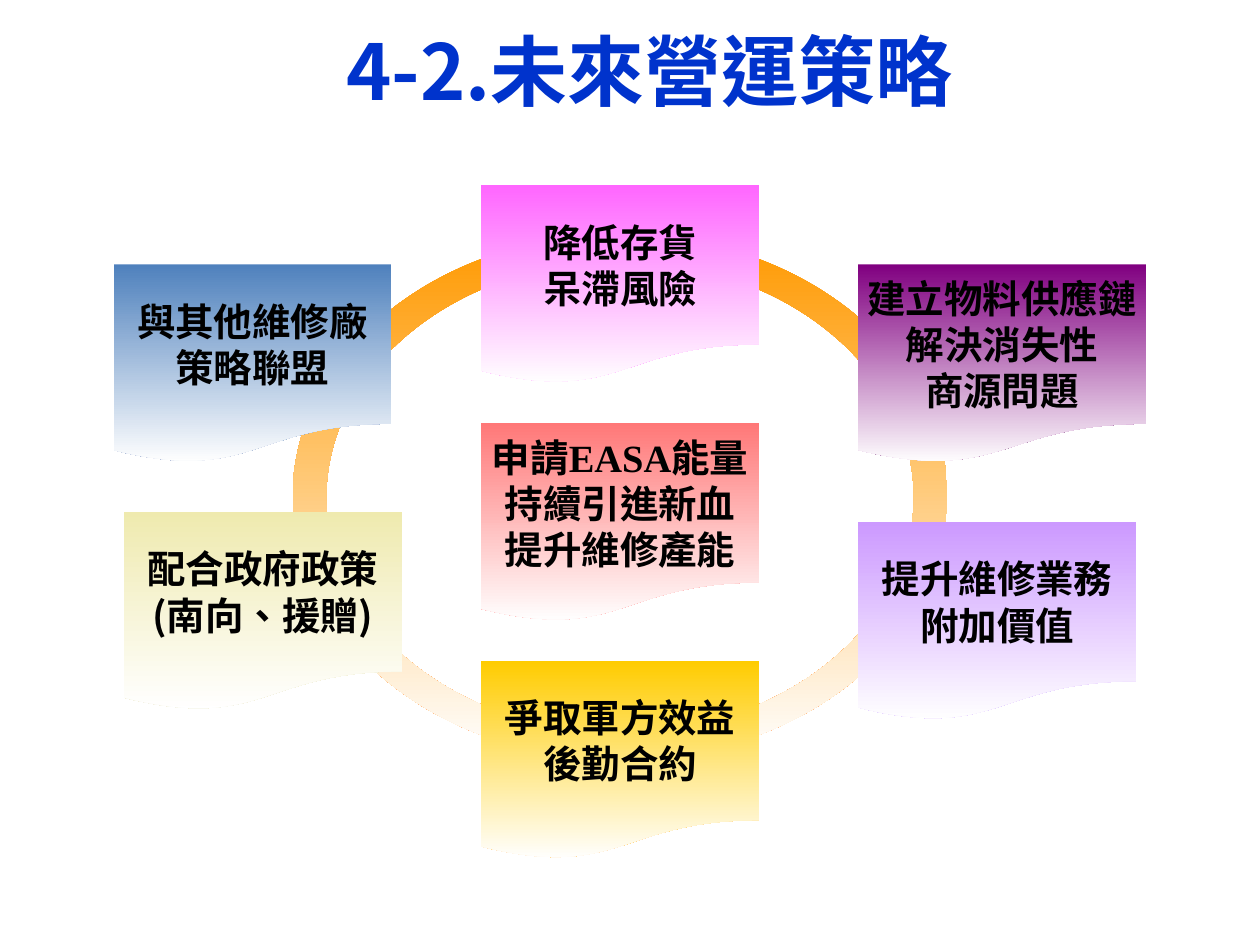
from lxml.etree import SubElement
from pptx import Presentation
from pptx.dml.color import RGBColor
from pptx.enum.lang import MSO_LANGUAGE_ID as Language
from pptx.enum.shapes import MSO_SHAPE as Preset
from pptx.enum.text import MSO_ANCHOR as Anchor, PP_ALIGN as Align
from pptx.oxml.ns import qn
from pptx.util import Cm, Pt

BLACK = RGBColor(0x00, 0x00, 0x00)
WHITE = RGBColor(0xFF, 0xFF, 0xFF)
TITLE_BLUE = RGBColor(0x00, 0x33, 0xCC)
ORANGE = RGBColor(0xFF, 0x99, 0x00)
STEEL_BLUE = RGBColor(0x4F, 0x81, 0xBD)
PINK = RGBColor(0xFF, 0x66, 0xFF)
CREAM = RGBColor(0xEF, 0xEA, 0xAF)
GOLD = RGBColor(0xFF, 0xCC, 0x00)
CORAL = RGBColor(0xFF, 0x78, 0x78)
LILAC = RGBColor(0xCC, 0x99, 0xFF)
PURPLE = RGBColor(0x80, 0x00, 0x80)

SANS = "Noto Sans CJK SC"
SERIF = "Times New Roman"
CARD_WIDTH, CARD_HEIGHT = 5.6, 4.01
MIDDLE_LEFT, RIGHT_LEFT = 9.7, 17.3
UPPER_TOP = 5.33
CURVE = 0.55
QUARTER_TURNS = [(-1, 0), (0, -1), (1, 0), (0, 1), (-1, 0)]

CARDS = [
    (2.29, UPPER_TOP, CARD_WIDTH, STEEL_BLUE, SANS, ["與其他維修廠", "策略聯盟"]),
    (MIDDLE_LEFT, 3.73, CARD_WIDTH, PINK, SANS, ["降低存貨", "呆滯風險"]),
    (2.5, 10.32, CARD_WIDTH, CREAM, SANS, ["配合政府政策", "(南向、援贈)"]),
    (MIDDLE_LEFT, 13.32, CARD_WIDTH, GOLD, SANS, ["爭取軍方效益", "後勤合約"]),
    (MIDDLE_LEFT, 8.53, CARD_WIDTH, CORAL, SERIF,
     ["申請EASA能量", "持續引進新血", "提升維修產能"]),
    (RIGHT_LEFT, 10.52, CARD_WIDTH, LILAC, SANS, ["提升維修業務", "附加價值"]),
    (RIGHT_LEFT, UPPER_TOP, 5.8, PURPLE, SANS,
     ["建立物料供應鏈", "解決消失性", "商源問題"]),
]


def apply_format(target, values):
    """Set every attribute named in values on the target."""
    for name, value in values.items():
        setattr(target, name, value)


def fade_to_white(shape, color):
    """Fill a shape with a downward gradient and remove its line and shadow."""
    shape.shadow.inherit = False
    shape.line.fill.background()
    shape.fill.gradient()
    shape.fill.gradient_angle = 270
    for stop, stop_color in zip(shape.fill.gradient_stops, (color, WHITE)):
        stop.color.rgb = stop_color


def write_lines(frame, lines, font_name, size, color, **paragraph_format):
    """Write centred bold lines, one paragraph each."""
    for index, line in enumerate(lines):
        paragraph = frame.add_paragraph() if index else frame.paragraphs[0]
        apply_format(paragraph, {"alignment": Align.CENTER, **paragraph_format})
        run = paragraph.add_run()
        run.text = line
        apply_format(run.font, {
            "name": font_name, "size": Pt(size), "bold": True,
            "language_id": Language.TRADITIONAL_CHINESE,
        })
        run.font.color.rgb = color
        SubElement(run.font._element, qn("a:ea"), typeface=SANS)


def ellipse_points(radius_x, radius_y):
    """Return the start and the Bezier points of an ellipse at the ring centre."""
    points = [QUARTER_TURNS[0]]
    for (x1, y1), (x2, y2) in zip(QUARTER_TURNS, QUARTER_TURNS[1:]):
        points += [(x1 + CURVE * x2, y1 + CURVE * y2),
                   (x2 + CURVE * x1, y2 + CURVE * y1), (x2, y2)]
    return [(Cm(12.5 + radius_x * x), Cm(10.02 + radius_y * y)) for x, y in points]


def bend_segments(shape):
    """Turn each three straight segments of a freeform into one cubic curve."""
    segments = list(shape._element.iter(qn("a:lnTo")))
    for first, second, third in zip(*[iter(segments)] * 3):
        first.tag = qn("a:cubicBezTo")
        for segment in (second, third):
            first.append(segment[0])
            segment.getparent().remove(segment)


def add_ring(slide):
    """Draw the elliptical ring that links the strategy cards."""
    outer = ellipse_points(6.6, 5.3)
    inner = ellipse_points(5.92, 4.75)[::-1]
    builder = slide.shapes.build_freeform(*outer[0])
    builder.add_line_segments(outer[1:], close=True)
    builder.move_to(*inner[0])
    builder.add_line_segments(inner[1:], close=True)
    shape = builder.convert_to_shape()
    bend_segments(shape)
    fade_to_white(shape, ORANGE)


def add_card(slide, left, top, width, color, font_name, lines):
    """Add one strategy card."""
    shape = slide.shapes.add_shape(
        Preset.FLOWCHART_DOCUMENT, Cm(left), Cm(top), Cm(width), Cm(CARD_HEIGHT))
    fade_to_white(shape, color)
    apply_format(shape.text_frame,
                 {"word_wrap": False, "vertical_anchor": Anchor.MIDDLE})
    write_lines(shape.text_frame, lines, font_name, 22, BLACK)


def add_title(slide, text):
    """Add the slide title."""
    box = slide.shapes.add_textbox(Cm(1.3), Cm(-0.06), Cm(23.6), Cm(2.39))
    apply_format(box.text_frame, {
        "word_wrap": True, "vertical_anchor": Anchor.BOTTOM,
        "margin_left": 0, "margin_right": 0,
        "margin_top": Cm(0.13), "margin_bottom": 0,
    })
    write_lines(box.text_frame, [text], SANS, 44, TITLE_BLUE, line_spacing=Pt(60))


def main():
    """Build and save the operating strategy slide."""
    presentation = Presentation()
    apply_format(presentation, {"slide_width": Cm(25.4), "slide_height": Cm(19.05)})
    slide = presentation.slides.add_slide(presentation.slide_layouts[6])
    add_ring(slide)
    for card in CARDS:
        add_card(slide, *card)
    add_title(slide, "4-2.未來營運策略")
    presentation.save("out.pptx")


if __name__ == "__main__":
    main()
